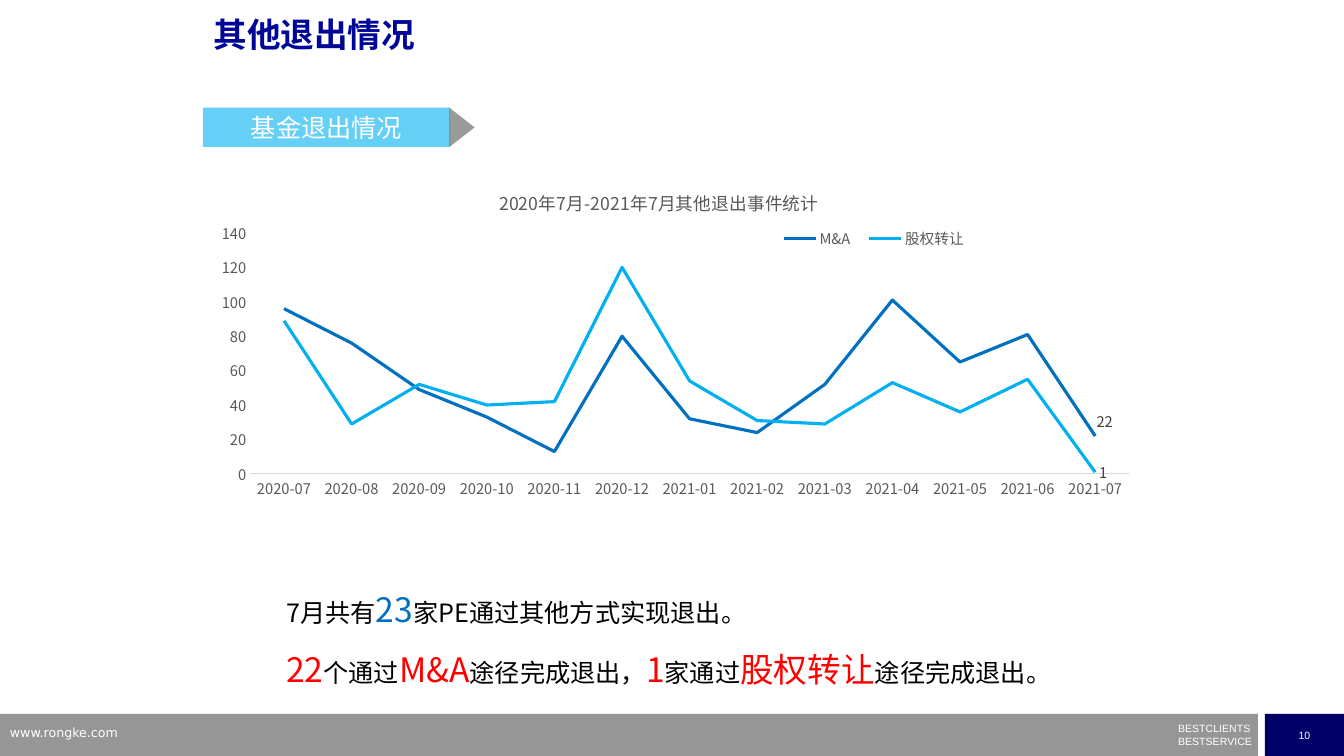
from dataclasses import dataclass
from lxml import etree
from pptx import Presentation
from pptx import util as u
from pptx.chart.data import CategoryChartData
from pptx.dml.color import RGBColor
from pptx.enum import chart as ch, shapes, text
from pptx.oxml import ns

Pt = u.Pt


@dataclass(frozen=True)
class Theme:
    sans: str = "Noto Sans CJK SC"
    latin: str = "Arial"
    web: str = "DejaVu Sans"
    title: float = 24
    strong: float = 24
    body: float = 18
    chart_title: float = 12.6
    chart: float = 10.5
    url: float = 9
    footer: float = 7.5
    white: str = "FFFFFF"
    black: str = "000000"
    navy: str = "000066"
    title_blue: str = "000798"
    blue: str = "0070C0"
    sky: str = "00B0F0"
    red: str = "FF0000"
    bar: str = "969696"
    dark: str = "595959"
    label: str = "404040"
    axis: str = "D9D9D9"


T = Theme()
MONTHS = [f"2020-{m:02}" for m in range(7, 13)] + [f"2021-{m:02}" for m in range(1, 8)]
EXITS = {
    "M&A": (96, 76, 49, 33, 13, 80, 32, 24, 52, 101, 65, 81, 22),
    "股权转让": (89, 29, 52, 40, 42, 120, 54, 31, 29, 53, 36, 55, 1),
}


def set_font(font, size=None, color=None, name=None, bold=None):
    if size:
        font.size = Pt(size)
    if color:
        font.color.rgb = RGBColor.from_string(color)
    if name:
        font.name = name
    if bold is not None:
        font.bold = bold


def set_east_asian(element):
    """Give every Latin font setting its Chinese counterpart."""
    for latin in list(element.iter(ns.qn("a:latin"))):
        ea = etree.Element(ns.qn("a:ea"), typeface=T.sans)
        latin.addnext(ea)


def add_block(s, kind, box, color, opacity=100, rotation=0):
    sp = s.shapes.add_shape(kind, *map(Pt, box))
    sp.shadow.inherit = False
    sp.rotation = rotation
    sp.fill.solid()
    sp.fill.fore_color.rgb = RGBColor.from_string(color)
    sp.line.fill.background()
    if opacity < 100:
        rgb = sp.element.spPr.find(ns.qn("a:solidFill"))[0]
        etree.SubElement(rgb, ns.qn("a:alpha"), val=str(opacity * 1000))
    return sp


def write_centered(sp, words, size, name):
    tf = sp.text_frame
    tf.vertical_anchor = text.MSO_ANCHOR.MIDDLE
    p = tf.paragraphs[0]
    p.alignment = text.PP_ALIGN.CENTER
    set_font(p.font, size, T.white, name)
    p.add_run().text = words


def add_text(s, box, lines, name, align=None, spacing=None, before=0, inset=True, bold=None):
    """Each line is a list of (words, size, color) runs."""
    tf = s.shapes.add_textbox(*map(Pt, box)).text_frame
    tf.word_wrap = True
    if not inset:
        tf.margin_left = tf.margin_right = tf.margin_top = tf.margin_bottom = 0
    for i, line in enumerate(lines):
        p = tf.add_paragraph() if i else tf.paragraphs[0]
        p.alignment = align
        p.line_spacing = spacing
        if i and before:
            p.space_before = Pt(before)
        set_font(p.font, name=name, bold=bold)
        for words, size, color in line:
            r = p.add_run()
            r.text = words
            set_font(r.font, size, color)


def set_layout(parent, index, **values):
    """Place a chart part by fractions of the chart area."""
    for old in parent.findall(ns.qn("c:layout")):
        parent.remove(old)
    layout = etree.Element(ns.qn("c:layout"))
    manual = etree.SubElement(layout, ns.qn("c:manualLayout"))
    for tag, value in values.items():
        etree.SubElement(manual, ns.qn(f"c:{tag}"), val=str(value))
    parent.insert(index, layout)


def add_exit_chart(s, box):
    data = CategoryChartData()
    data.categories = MONTHS
    for name, values in EXITS.items():
        data.add_series(name, values)
    chart = s.shapes.add_chart(ch.XL_CHART_TYPE.LINE, *map(Pt, box), data).chart
    set_font(chart.font, T.chart, T.dark, T.sans)

    # Title and legend
    p = chart.chart_title.text_frame.paragraphs[0]
    set_font(p.font, T.chart_title, T.dark, T.sans, False)
    p.add_run().text = "2020年7月-2021年7月其他退出事件统计"
    chart.has_legend = True
    chart.legend.position = ch.XL_LEGEND_POSITION.BOTTOM
    chart.legend.include_in_layout = False
    set_font(chart.legend.font, T.chart, T.dark, T.sans)

    # Axes
    months, counts = chart.category_axis, chart.value_axis
    for axis in (months, counts):
        axis.has_major_gridlines = False
        axis.major_tick_mark = axis.minor_tick_mark = ch.XL_TICK_MARK.NONE
        set_font(axis.tick_labels.font, T.chart, T.dark, T.sans)
    months.format.line.color.rgb = RGBColor.from_string(T.axis)
    months.format.line.width = Pt(0.75)
    counts.format.line.fill.background()
    counts.minimum_scale, counts.maximum_scale, counts.major_unit = 0, 140, 20

    # Lines, each with its last value shown
    positions = (ch.XL_LABEL_POSITION.ABOVE, ch.XL_LABEL_POSITION.RIGHT)
    plot = chart.plots[0]
    plot.vary_by_categories = False
    for series, color, position in zip(plot.series, (T.blue, T.sky), positions):
        series.smooth = False
        series.marker.style = ch.XL_MARKER_STYLE.NONE
        series.format.line.color.rgb = RGBColor.from_string(color)
        series.format.line.width = Pt(2.25)
        label = series.points[len(MONTHS) - 1].data_label
        set_font(label.font, T.chart, T.label, T.sans)
        label.position = position

    # Placement inside the chart
    root = chart.element
    edge = dict(xMode="edge", yMode="edge")
    set_layout(root.find(".//" + ns.qn("c:plotArea")), 0, layoutTarget="inner",
               **edge, x=0.05, y=0.18, w=0.93, h=0.64)
    set_layout(root.find(".//" + ns.qn("c:legend")), 1, **edge, x=0.6, y=0.16, w=0.22, h=0.07)
    set_layout(root.find(".//" + ns.qn("c:title")), 1, **edge, x=0.31, y=0.05)
    set_layout(root.find(".//" + ns.qn("c:dLbl")), 1, x=0.01, y=0)
    set_east_asian(root)


def add_footer(s):
    rect = shapes.MSO_SHAPE.RECTANGLE
    add_block(s, rect, (0, 510, 898.5, 30), T.bar)
    number = add_block(s, rect, (903.5, 510, 56.5, 30), T.navy)
    write_centered(number, "10", T.footer, T.latin)
    motto = [[(words, T.footer, T.white)] for words in ("BESTCLIENTS", "BESTSERVICE")]
    add_text(s, (841.5, 520, 55, 14.5), motto, T.latin, spacing=0.5, before=4.3, inset=False)
    add_text(s, (0, 514, 230, 19), [[("www.rongke.com", T.url, T.white)]], T.web)


def main():
    prs = Presentation()
    prs.slide_width, prs.slide_height = Pt(960), Pt(540)
    s = prs.slides.add_slide(prs.slide_layouts[6])
    add_footer(s)

    # Heading and section tag
    add_text(s, (145.5, 10, 648, 50), [[("其他退出情况", T.title, T.title_blue)]],
             T.latin, spacing=0.9, bold=True)
    tag = add_block(s, shapes.MSO_SHAPE.RECTANGLE, (145, 77, 176.5, 28), T.sky, 60)
    write_centered(tag, "基金退出情况", T.body, T.sans)
    add_block(s, shapes.MSO_SHAPE.ISOSCELES_TRIANGLE, (316, 82, 28, 18), T.dark, 60, 90)

    add_exit_chart(s, (145, 118, 675, 269))

    # Summary
    def plain(words):
        return words, T.body, T.black

    def key(words, color=T.red):
        return words, T.strong, color

    add_text(s, (204.5, 406, 578, 82), [
        [plain("7月共有"), key("23", T.blue), plain("家PE通过其他方式实现退出。")],
        [key("22"), plain("个通过"), key("M&A"), plain("途径完成退出，"), key("1"),
         plain("家通过"), key("股权转让"), plain("途径完成退出。")],
    ], T.sans, text.PP_ALIGN.JUSTIFY, 1.5, inset=False)
    set_east_asian(s.shapes.element)
    prs.save("out.pptx")


if __name__ == "__main__":
    main()
